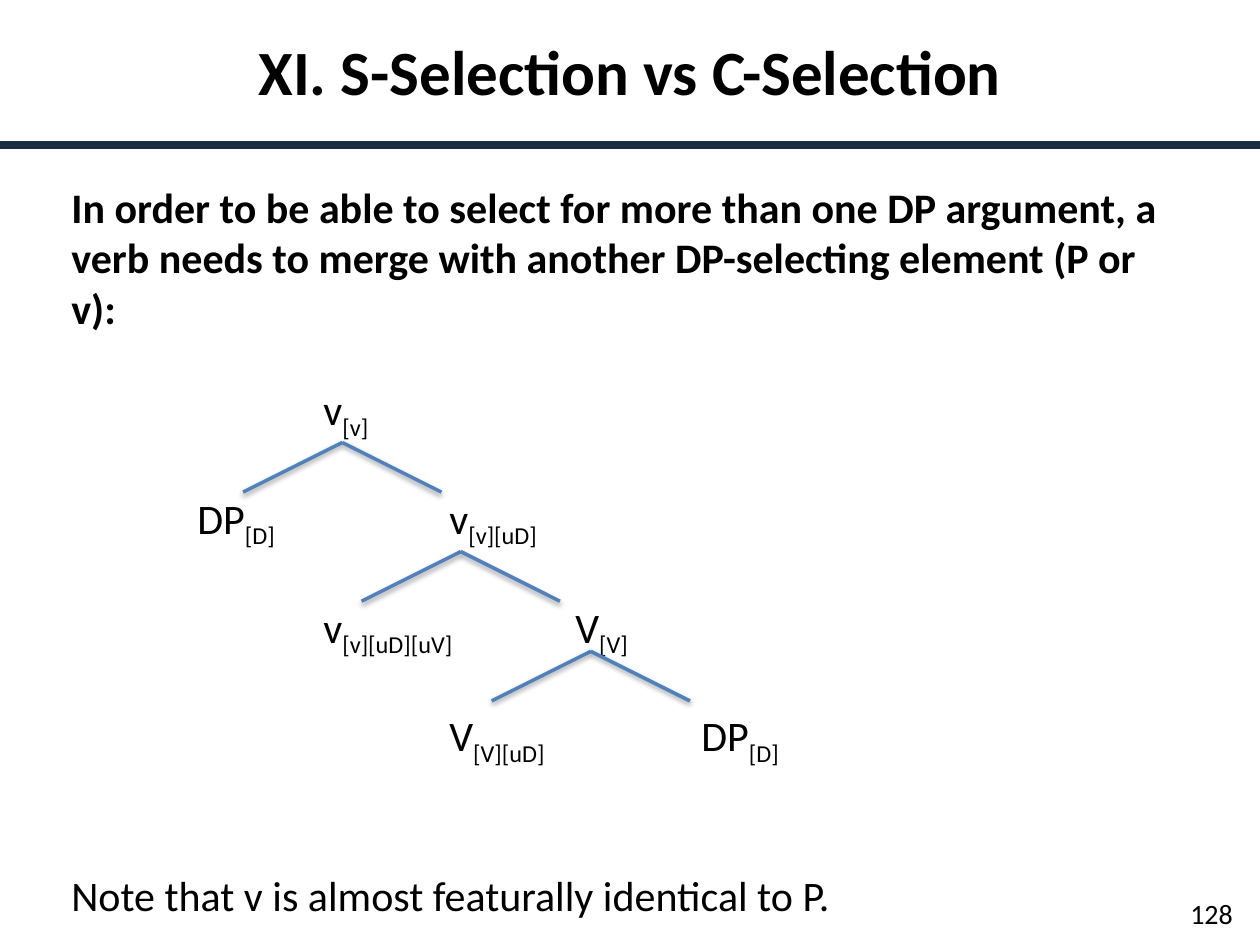
"""Build a slide on S-selection and C-selection with a branching tree."""
from lxml.etree import SubElement
from pptx import Presentation
from pptx.dml.color import RGBColor
from pptx.enum.shapes import MSO_CONNECTOR
from pptx.enum.text import MSO_ANCHOR, PP_ALIGN
from pptx.oxml import parse_xml
from pptx.oxml.ns import nsdecls, qn
from pptx.util import Cm, Pt

COLORS = {"text": "000000", "rule": "192C43", "branch": "4F81BD"}
FONT = "Calibri"
SIZE = 24
GAP = 29.3
TITLE = "XI. S-Selection vs C-Selection"
NUMBER = "128"
CLAIM = ("In order to be able to select for more than one DP argument, a verb "
         "needs to merge with another DP-selecting element (P or v):")
TREE = [
    [("\t\tv", "[v]")],
    [("\tDP", "[D]"), ("\t\tv", "[v][uD]")],
    [("\t\tv", "[v][uD][uV]"), ("\tV", "[V]")],
    [("\t\t\tV", "[V][uD]"), ("\t\tDP", "[D]")],
]
NOTE = "Note that v is almost featurally identical to P."
PEAKS = [(6.9, 8.92), (9.29, 11.12), (11.91, 13.13)]
HALF, DROP = 2, 1
TABS = [2.54 * n for n in range(1, 6)]
SHADOW = (
    f'<a:effectLst {nsdecls("a")}><a:outerShdw blurRad="40000" dist="20000" '
    'dir="5400000" rotWithShape="0"><a:srgbClr val="000000">'
    '<a:alpha val="38000"/></a:srgbClr></a:outerShdw></a:effectLst>')
FLAT = f'<a:effectLst {nsdecls("a")}/>'


def add_line(slide, start, end, color, width, effect):
    line = slide.shapes.add_connector(
        MSO_CONNECTOR.STRAIGHT, *map(Cm, start + end))
    line.line.color.rgb = RGBColor.from_string(COLORS[color])
    line.line.width = Pt(width)
    line._element.spPr.append(parse_xml(effect))


def add_box(slide, left, top, width, height):
    frame = slide.shapes.add_textbox(*map(Cm, (left, top, width, height))).text_frame
    frame.word_wrap = True
    return frame


def add_run(para, text, size, bold=False, sub=False):
    run = para.add_run()
    run.text = text
    run.font.name = FONT
    run.font.size = Pt(size)
    run.font.bold = bold
    run.font.color.rgb = RGBColor.from_string(COLORS["text"])
    if sub:
        run.font._element.set("baseline", "-25000")


def add_row(frame, pairs):
    para = frame.add_paragraph()
    para.space_before = Pt(GAP)
    stops = SubElement(para._p.get_or_add_pPr(), qn("a:tabLst"))
    for pos in TABS:
        SubElement(stops, qn("a:tab"), pos=str(Cm(pos)), algn="l")
    for head, mark in pairs:
        add_run(para, head, SIZE)
        add_run(para, mark, SIZE, sub=True)


def main():
    deck = Presentation()
    deck.slide_width, deck.slide_height = Cm(25.4), Cm(19.05)
    slide = deck.slides.add_slide(deck.slide_layouts[6])

    add_line(slide, (0, 2.92), (25.4, 2.92), "rule", 4.5, FLAT)

    page = add_box(slide, 23.47, 17.91, 1.63, 1.02)
    page.vertical_anchor = MSO_ANCHOR.MIDDLE
    page.paragraphs[0].alignment = PP_ALIGN.RIGHT
    add_run(page.paragraphs[0], NUMBER, 16)

    title = add_box(slide, 0.2, 0.53, 25, 1.8)
    title.paragraphs[0].alignment = PP_ALIGN.CENTER
    add_run(title.paragraphs[0], TITLE, 36, bold=True)

    body = add_box(slide, 1.19, 3.53, 23.01, 14.63)
    add_run(body.paragraphs[0], CLAIM, SIZE, bold=True)
    for pairs in TREE:
        add_row(body, pairs)
    note = body.add_paragraph()
    note.space_before = Pt(2 * GAP)
    add_run(note, NOTE, SIZE)

    for x, y in PEAKS:
        for side in (-HALF, HALF):
            add_line(slide, (x, y), (x + side, y + DROP), "branch", 2, SHADOW)

    deck.save("out.pptx")


if __name__ == "__main__":
    main()
